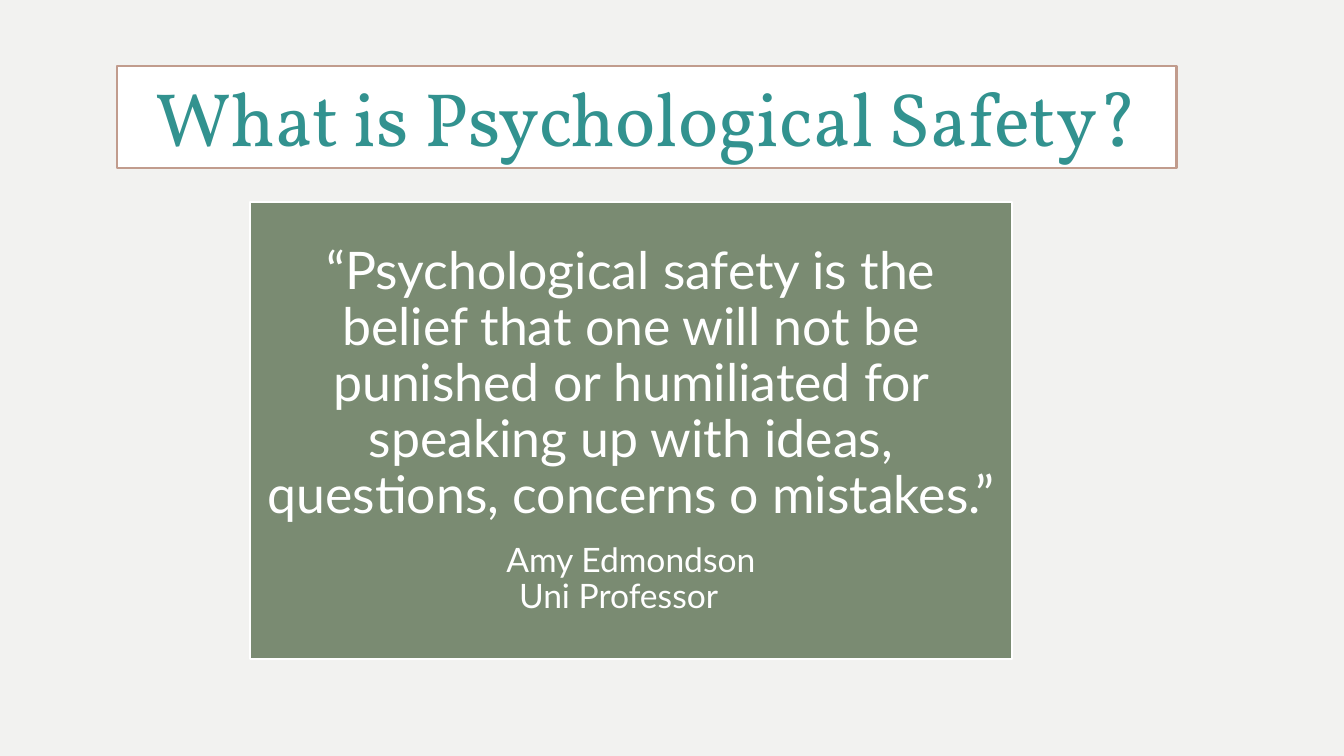
from lxml import etree
from pptx import Presentation
from pptx.dml.color import RGBColor
from pptx.enum.shapes import MSO_SHAPE
from pptx.enum.text import MSO_ANCHOR, MSO_AUTO_SIZE, PP_ALIGN
from pptx.oxml.ns import qn
from pptx.util import Cm, Pt

RECTANGLE = MSO_SHAPE.RECTANGLE
CENTER = PP_ALIGN.CENTER
TOP = MSO_ANCHOR.TOP
MIDDLE = MSO_ANCHOR.MIDDLE
GROW = MSO_AUTO_SIZE.SHAPE_TO_FIT_TEXT

QUOTE = (
    "“Psychological safety is the belief that one will not be punished or "
    "humiliated for speaking up with ideas, questions, concerns o mistakes.”"
)


def color(value):
    return RGBColor.from_string(value)


def set_opacity(panel, percent):
    tint = panel.fill._xPr.find(qn("a:solidFill"))[0]
    etree.SubElement(tint, qn("a:alpha")).set("val", str(percent * 1000))


def add_panel(slide, left, top, width, height, fill, border, anchor, inset):
    panel = slide.shapes.add_shape(RECTANGLE, Cm(left), Cm(top), Cm(width), Cm(height))
    panel.shadow.inherit = False
    panel.fill.solid()
    panel.fill.fore_color.rgb = color(fill)
    panel.line.color.rgb = color(border)
    panel.line.width = Pt(1.5)
    frame = panel.text_frame
    frame.word_wrap = True
    frame.vertical_anchor = anchor
    frame.margin_left = frame.margin_right = Cm(inset[0])
    frame.margin_top = frame.margin_bottom = Cm(inset[1])
    return panel


def format_line(line, font, size, hue, spacing=1.0, after=0):
    line.alignment = CENTER
    line.line_spacing = spacing
    line.space_after = Pt(after)
    for run in line.runs:
        run.font.name = font
        run.font.size = Pt(size)
        run.font.color.rgb = color(hue)


def add_title(slide):
    title = add_panel(slide, 2.95, 1.67, 26.7, 2.57, "FFFFFF", "C19C8D", TOP, (0.25, 0.13))
    title.text_frame.auto_size = GROW
    title.text_frame.text = "What is Psychological Safety?"
    format_line(title.text_frame.paragraphs[0], "Vollkorn", 54, "32928F")


def add_quote(slide):
    card = add_panel(slide, 6.3, 5.08, 19.2, 11.53, "6E8065", "FFFFFF", MIDDLE, (0.38, 0.38))
    set_opacity(card, 90)
    card.text_frame.text = "\n".join([QUOTE, "Amy Edmondson", "Uni Professor"])
    quote, author, role = card.text_frame.paragraphs
    format_line(quote, "Lato", 37, "FFFFFF", 0.9, 13)
    for credit in (author, role):
        format_line(credit, "Lato", 24, "FFFFFF", 0.9)
    role._p.get_or_add_pPr().set("marR", str(Cm(0.62)))


def main():
    deck = Presentation()
    deck.slide_width = Cm(33.87)
    deck.slide_height = Cm(19.05)
    slide = deck.slides.add_slide(deck.slide_layouts[6])
    slide.background.fill.solid()
    slide.background.fill.fore_color.rgb = color("F2F2F0")
    add_title(slide)
    add_quote(slide)
    deck.save("out.pptx")


if __name__ == "__main__":
    main()
